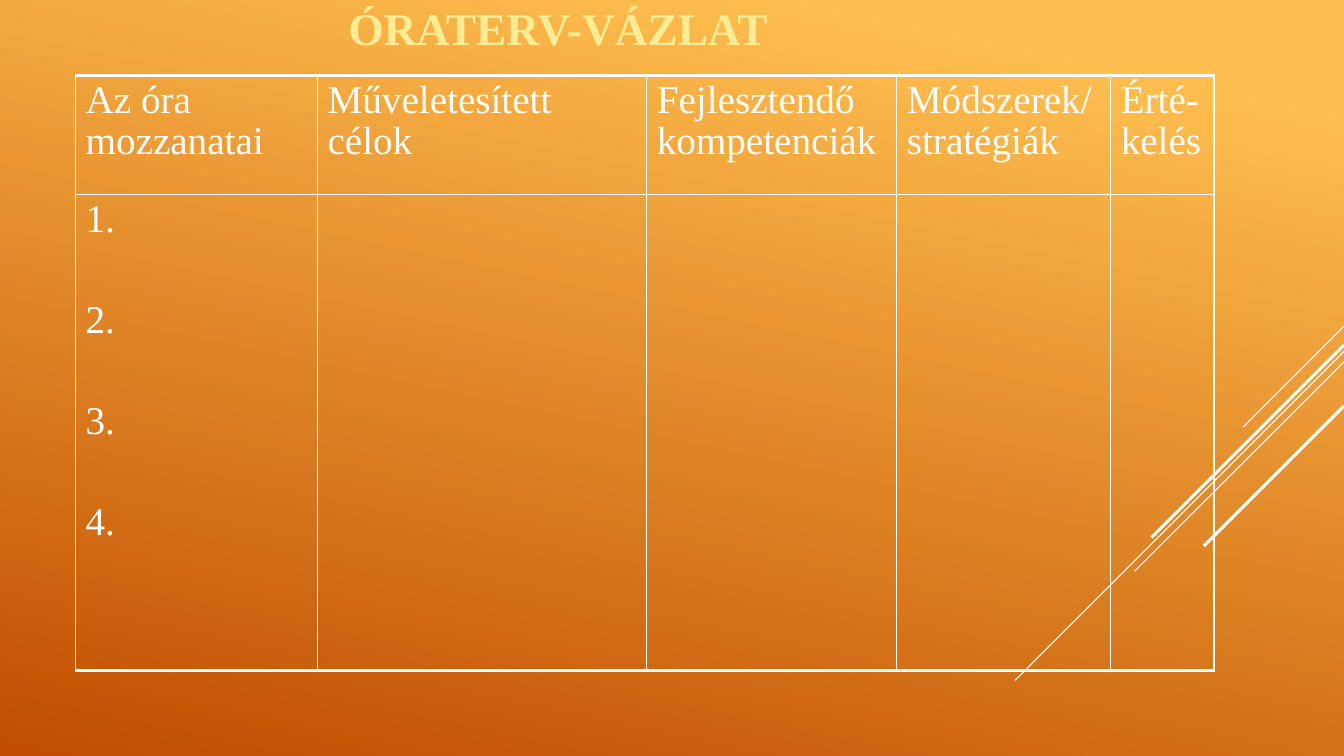
from lxml import etree
from pptx import Presentation
from pptx.dml.color import RGBColor
from pptx.enum.shapes import MSO_CONNECTOR
from pptx.oxml.ns import qn
from pptx.util import Pt

STRAIGHT = MSO_CONNECTOR.STRAIGHT
FONT = "Times New Roman"
COLORS = {"white": "FFFFFF", "title": "FEEC94", "light": "FFBF50", "dark": "C04D00"}
THIN, THICK = 1, 2.25


def add_text(para, text, size, color, bold=False):
    span = para.add_run()
    span.text = text
    span.font.name = FONT
    span.font.size = Pt(size)
    span.font.bold = bold
    span.font.color.rgb = RGBColor.from_string(COLORS[color])


def set_border(cell, side, width):
    line = etree.SubElement(cell._tc.get_or_add_tcPr(), qn(f"a:{side}"), w=str(Pt(width)))
    fill = etree.SubElement(line, qn("a:solidFill"))
    etree.SubElement(fill, qn("a:srgbClr"), val=COLORS["white"])


deck = Presentation()
deck.slide_width, deck.slide_height = Pt(960), Pt(540)
page = deck.slides.add_slide(deck.slide_layouts[6])

# Background gradient
background = page.background.fill
background.gradient()
background.gradient_angle = 258
for stop, position, color in zip(background.gradient_stops, (0.1, 1), ("light", "dark")):
    stop.position = position
    stop.color.rgb = RGBColor.from_string(COLORS[color])

# Diagonal lines running down from the right edge: start height, extent, width
for top, extent, width in [(233, 72, 0.75), (251, 235, 0.75), (258.5, 149.5, 0.75),
                           (246.5, 137.5, THICK), (290, 100, THICK)]:
    diagonal = page.shapes.add_connector(
        STRAIGHT, Pt(960), Pt(top), Pt(960 - extent), Pt(top + extent))
    diagonal.line.color.rgb = RGBColor.from_string(COLORS["white"])
    diagonal.line.width = Pt(width)
    etree.SubElement(diagonal._element.spPr, qn("a:effectLst"))

# Title
title = page.shapes.add_textbox(Pt(249), Pt(0), Pt(400), Pt(38)).text_frame
title.word_wrap = True
title.margin_left = title.margin_right = title.margin_top = title.margin_bottom = 0
add_text(title.paragraphs[0], "ÓRATERV-VÁZLAT", 32.4, "title", bold=True)

# Lesson plan table
headers = ["Az óra mozzanatai", "Műveletesített célok", "Fejlesztendő kompetenciák",
           "Módszerek/ stratégiák", "Érté-kelés"]
steps = ["1.", "2.", "3.", "4."]
column_widths = [172.8, 235.2, 178.6, 152.8, 73.8]
row_heights = [85, 340]
table = page.shapes.add_table(
    len(row_heights), len(column_widths), Pt(54), Pt(54),
    Pt(sum(column_widths)), Pt(sum(row_heights))).table
table.first_row = table.horz_banding = False
for column, width in zip(table.columns, column_widths):
    column.width = Pt(width)
for row, height in zip(table.rows, row_heights):
    row.height = Pt(height)

last_row, last_column = len(row_heights) - 1, len(column_widths) - 1
for r in range(last_row + 1):
    for c in range(last_column + 1):
        cell = table.cell(r, c)
        set_border(cell, "lnL", THIN)
        set_border(cell, "lnR", THICK if c == last_column else THIN)
        set_border(cell, "lnT", THICK if r == 0 else THIN)
        set_border(cell, "lnB", THICK if r == last_row else THIN)
        cell.fill.background()

# Cell text; the steps are spread down the first column
for c, header in enumerate(headers):
    para = table.cell(0, c).text_frame.paragraphs[0]
    para.line_spacing = 0.95
    add_text(para, header, 28, "white")
frame = table.cell(1, 0).text_frame
for i, step in enumerate(steps):
    para = frame.add_paragraph() if i else frame.paragraphs[0]
    para.line_spacing = 0.95
    para.space_before = Pt(42.7 if i else 0)
    add_text(para, step, 28, "white")

deck.save("out.pptx")
